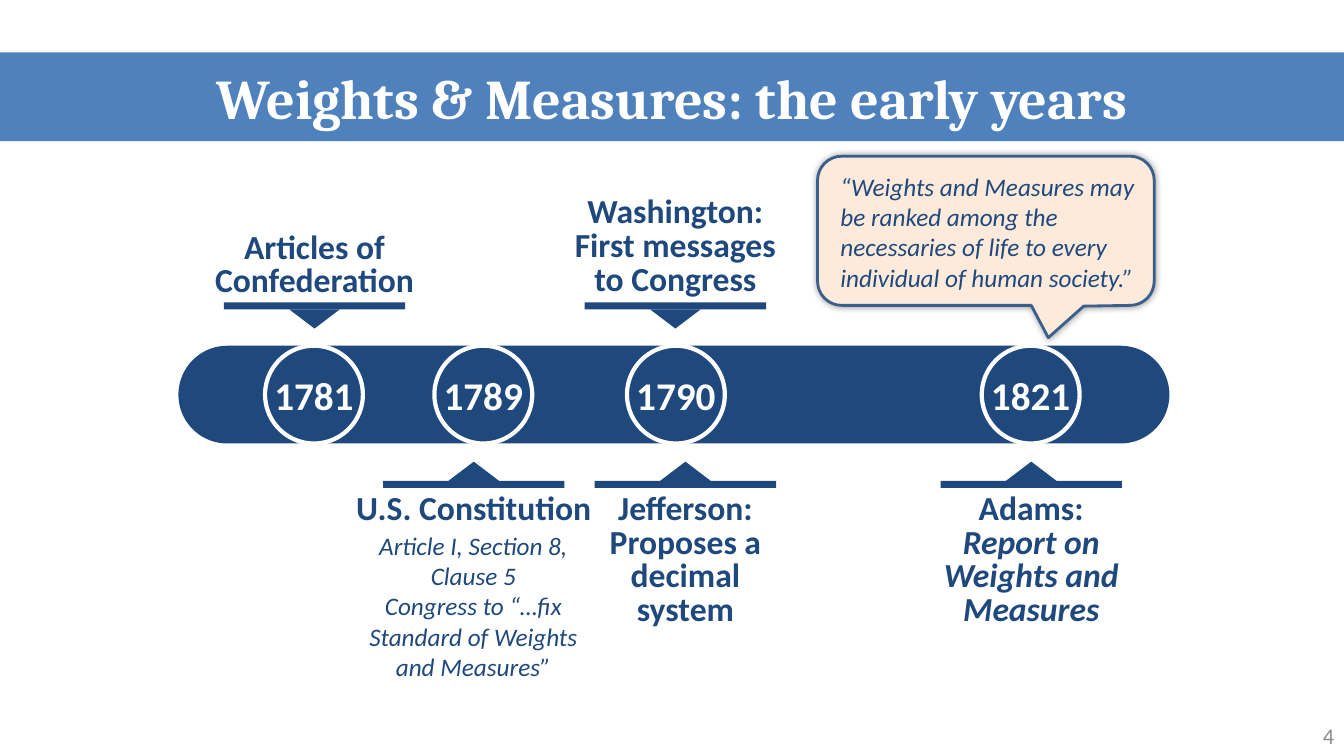
import math
from dataclasses import dataclass

from lxml import etree
from pptx import Presentation
from pptx import util as u
from pptx.dml.color import RGBColor
from pptx.enum import shapes, text
from pptx.oxml import ns

SHAPE = shapes.MSO_SHAPE
ALIGN = text.PP_ALIGN
ANCHOR = text.MSO_ANCHOR


@dataclass(frozen=True)
class Theme:
    navy: str = "1F497D"
    band: str = "4F81BD"
    peach: str = "FDEADA"
    outline: str = "3A5F8C"
    white: str = "FEFEFE"
    grey: str = "8C8C8C"
    title_font: str = "Cambria"
    body_font: str = "Calibri"
    title: int = 40
    year: int = 28
    label: int = 24
    detail: int = 18
    number: int = 16


THEME = Theme()

# Grid: 100 columns by 100 rows over the slide
WIDTH, HEIGHT = u.Inches(13.33), u.Inches(7.5)
BAR_TOP, BAR_ROWS = 45.73, 12.93
CIRCLE_COLS = 7.28
RULE_COLS, RULE_ROWS = 13.5, 0.93
POINTER_COLS, POINTER_ROWS = 3.75, 2.53
RULE_ABOVE, RULE_BELOW = 40, 63.6

YEARS = [("1781", 23.36), ("1789", 35.96), ("1790", 50.29), ("1821", 76.69)]

# Label paragraphs, centre column, columns wide, rows high, above the bar
EVENTS = [
    (["Articles of Confederation"], 23.4, 20.25, 9.73, True),
    (["Washington:", "First messages to Congress"], 50.25, 18.75, 14.4, True),
    (["U.S. Constitution"], 35.25, 20.25, 6.53, False),
    (["Jefferson: Proposes a decimal system"], 51, 17.18, 25.33, False),
    (["Adams:\vReport on Weights and Measures"], 76.73, 20.25, 24, False),
]
DETAIL = ("Article I, Section 8, Clause 5\v"
          "Congress to “…fix Standard of Weights and Measures”")
QUOTE = ("“Weights and Measures may be ranked among the necessaries "
         "of life to every individual of human society.”")


def cols(n):
    return u.Emu(round(WIDTH * n / 100))


def rows(n):
    return u.Emu(round(HEIGHT * n / 100))


def box(left, top, width, height):
    return cols(left), rows(top), cols(width), rows(height)


def paint(sp, fill, line=None, weight=0):
    sp.shadow.inherit = False
    sp.fill.solid()
    sp.fill.fore_color.rgb = RGBColor.from_string(fill)
    if line:
        sp.line.color.rgb = RGBColor.from_string(line)
        sp.line.width = u.Pt(weight)
    else:
        sp.line.fill.background()


def write(sp, paragraphs, size, color, align=ALIGN.CENTER, bold=False,
          italic=False, font=THEME.body_font, spacing=None, anchor=ANCHOR.TOP):
    tf = sp.text_frame
    tf.word_wrap = True
    tf.vertical_anchor = anchor
    tf.text = "\n".join(paragraphs)
    for p in tf.paragraphs:
        p.alignment = align
        p.line_spacing = spacing
        for r in p.runs:
            r.font.name, r.font.size = font, u.Pt(size)
            r.font.bold, r.font.italic = bold, italic
            r.font.color.rgb = RGBColor.from_string(color)
    return tf


def add_block(slide, kind, place, fill, line=None, weight=0):
    sp = slide.shapes.add_shape(kind, *place)
    paint(sp, fill, line, weight)
    return sp


def add_text(slide, place, paragraphs, size, color, **style):
    sp = slide.shapes.add_textbox(*place)
    return write(sp, paragraphs, size, color, **style)


def add_title(slide, title):
    sp = slide.shapes.title
    sp.left, sp.top, sp.width, sp.height = box(0, 6.93, 100, 11.73)
    paint(sp, THEME.band)
    tf = write(sp, [title], THEME.title, "FFFFFF", bold=True,
               font=THEME.title_font, anchor=ANCHOR.MIDDLE)
    tf.auto_size = text.MSO_AUTO_SIZE.NONE


def add_year(slide, year, centre):
    place = box(centre - CIRCLE_COLS / 2, BAR_TOP, CIRCLE_COLS, BAR_ROWS)
    sp = add_block(slide, SHAPE.OVAL, place, THEME.navy, THEME.white, 3)
    tf = write(sp, [year], THEME.year, THEME.white, bold=True,
               anchor=ANCHOR.MIDDLE)
    tf.word_wrap = False
    tf.margin_left = tf.margin_right = 0


def add_event(slide, label, centre, width, height, above):
    # Rule and pointer facing the timeline
    rule_top = RULE_ABOVE if above else RULE_BELOW
    pointer_top = rule_top + (RULE_ROWS if above else -POINTER_ROWS)
    pointer = add_block(slide, SHAPE.ISOSCELES_TRIANGLE,
                        box(centre - POINTER_COLS / 2, pointer_top,
                            POINTER_COLS, POINTER_ROWS), THEME.navy)
    if above:
        pointer.rotation = 180
    add_block(slide, SHAPE.RECTANGLE,
              box(centre - RULE_COLS / 2, rule_top, RULE_COLS, RULE_ROWS),
              THEME.navy)
    # Label on the far side of the rule
    top = rule_top - 0.2 - height if above else rule_top + RULE_ROWS + 0.1
    return add_text(slide, box(centre - width / 2, top, width, height), label,
                    THEME.label, THEME.navy, bold=True, spacing=u.Pt(24))


def add_callout(slide):
    left, top, right, bottom = 60.83, 20.67, 85.88, 40.4
    rx, ry, steps = 1.8, 3.2, 8
    tail = [(80.63, bottom + 0.1), (78, 44.67), (76.73, bottom)]
    corners = [(left + rx, top + ry, 180), (right - rx, top + ry, 270),
               (right - rx, bottom - ry, 0), (left + rx, bottom - ry, 90)]
    points = []
    for cx, cy, start in corners:
        if start == 90:
            points += tail
        for i in range(steps + 1):
            angle = math.radians(start + 90 * i / steps)
            points.append((cx + rx * math.cos(angle),
                           cy + ry * math.sin(angle)))
    outline = [(cols(x), rows(y)) for x, y in points]
    builder = slide.shapes.build_freeform(*outline[0])
    builder.add_line_segments(outline[1:], close=True)
    sp = builder.convert_to_shape()
    paint(sp, THEME.peach, THEME.outline, 2)
    # Soft shadow around the outline
    effects = sp._element.spPr.find(ns.qn("a:effectLst"))
    shadow = etree.SubElement(effects, ns.qn("a:outerShdw"),
                              blurRad=str(u.Pt(5)), dist="0", dir="0")
    black = etree.SubElement(shadow, ns.qn("a:srgbClr"), val="000000")
    etree.SubElement(black, ns.qn("a:alpha"), val="40000")
    add_text(slide, box(61.8, 22, 24, 17.47), [QUOTE], THEME.detail,
             THEME.navy, align=ALIGN.LEFT, italic=True)


def main():
    prs = Presentation()
    prs.slide_width, prs.slide_height = WIDTH, HEIGHT
    slide = prs.slides.add_slide(prs.slide_layouts[5])
    add_title(slide, "Weights & Measures: the early years")

    # Timeline
    bar = add_block(slide, SHAPE.ROUNDED_RECTANGLE,
                    box(13.28, BAR_TOP, 73.73, BAR_ROWS), THEME.navy)
    bar.adjustments[0] = 0.5
    for year, centre in YEARS:
        add_year(slide, year, centre)

    # Events, with the report's name in italics
    for event in EVENTS:
        tf = add_event(slide, *event)
    tf.paragraphs[0].runs[-1].font.italic = True
    add_text(slide, box(26.63, 69.47, 17.18, 21.6), [DETAIL], THEME.detail,
             THEME.navy, italic=True)

    # Quotation and page number
    add_callout(slide)
    add_text(slide, box(76.67, 94.67, 23.33, 5.33), ["4"], THEME.number,
             THEME.grey, align=ALIGN.RIGHT, anchor=ANCHOR.MIDDLE)
    prs.save("out.pptx")


if __name__ == "__main__":
    main()
